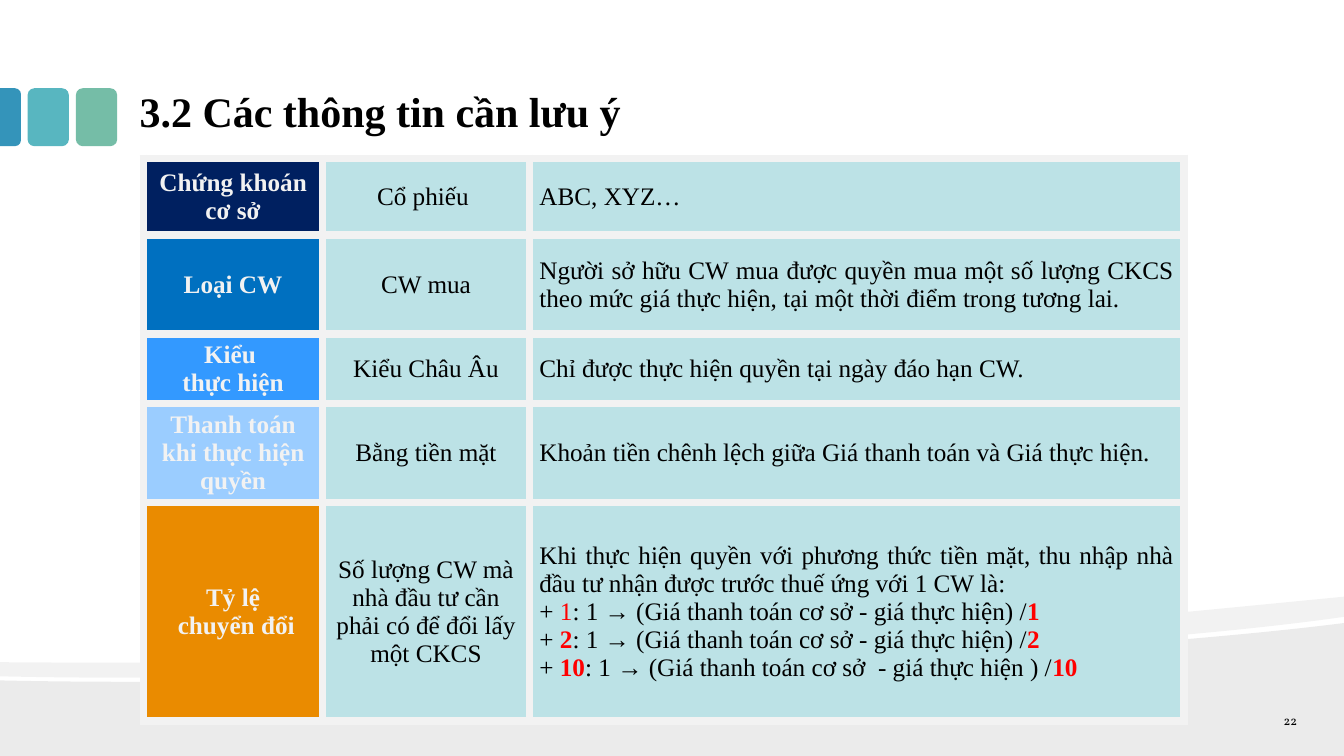
from lxml import etree
from pptx import Presentation
from pptx.dml.color import RGBColor
from pptx.enum.shapes import MSO_SHAPE
from pptx.enum.text import MSO_ANCHOR, PP_ALIGN
from pptx.oxml.ns import qn
from pptx.util import Pt

BLACK = RGBColor(0x00, 0x00, 0x00)
RED = RGBColor(0xFF, 0x00, 0x00)
PALE = RGBColor(0xF2, 0xF2, 0xF2)
CELL = RGBColor(0xBC, 0xE2, 0xE6)
NAVY = RGBColor(0x00, 0x20, 0x60)
BLUE = RGBColor(0x00, 0x70, 0xC0)
AZURE = RGBColor(0x33, 0x99, 0xFF)
SKY = RGBColor(0x9B, 0xCD, 0xFF)
ORANGE = RGBColor(0xEA, 0x8B, 0x00)
GREEN = RGBColor(0x75, 0xBD, 0xA7)
TEAL = RGBColor(0x58, 0xB6, 0xC0)
OCEAN = RGBColor(0x34, 0x94, 0xBA)
SERIF = "Times New Roman"


def add_label(box, text, size, font, bold, align, anchor):
    tf = s.shapes.add_textbox(*map(Pt, box)).text_frame
    tf.word_wrap = True
    tf.vertical_anchor = anchor
    tf.margin_left = tf.margin_right = Pt(9.4)
    tf.margin_top = tf.margin_bottom = Pt(5)
    p = tf.paragraphs[0]
    p.text, p.alignment = text, align
    p.font.name, p.font.size, p.font.bold = font, Pt(size), bold
    p.font.color.rgb = BLACK


prs = Presentation()
prs.slide_width, prs.slide_height = Pt(960), Pt(540)
s = prs.slides.add_slide(prs.slide_layouts[6])

# Waves along the bottom: opacity, points, and where each curve's three points begin
ground = [(960, 445), (960, 540), (0, 540), (0, 486),
          (253.4, 491.8), (750.2, 471.6), (960, 445)]
ribbon = [(960, 426.2), (960, 440.6), (904.3, 448.6), (827.3, 455.8), (740.9, 461.5),
          (502.6, 477.4), (185.8, 487.4), (0, 483.1), (0, 473),
          (469.4, 476.6), (699.1, 451.4), (960, 426.2)]
for opacity, outline, curves in ((8, ground, [4]), (5, ribbon, [2, 5, 9])):
    points = [(Pt(x), Pt(y)) for x, y in outline]
    builder = s.shapes.build_freeform(*points[0])
    builder.add_line_segments(points[1:], close=True)
    wave = builder.convert_to_shape()
    wave.shadow.inherit = False
    wave.fill.solid()
    wave.fill.fore_color.rgb = BLACK
    wave.line.fill.background()
    clr = wave._element.spPr.find(qn("a:solidFill")).find(qn("a:srgbClr"))
    etree.SubElement(clr, qn("a:alpha"), val=str(opacity * 1000))
    # Join the three points of each curve into one Bezier segment
    lines = list(wave._element.iter(qn("a:lnTo")))
    for start in curves:
        bezier = etree.Element(qn("a:cubicBezTo"))
        lines[start - 1].addprevious(bezier)
        for line in lines[start - 1:start + 2]:
            bezier.append(line[0])
            line.getparent().remove(line)

# Tabs beside the title
for kind, box, turn, color in (
        (MSO_SHAPE.ROUNDED_RECTANGLE, (54.2, 63, 29.5, 41.4), 0, GREEN),
        (MSO_SHAPE.ROUNDED_RECTANGLE, (19.7, 63, 29.5, 41.4), 0, TEAL),
        (MSO_SHAPE.ROUND_2_SAME_RECTANGLE, (-13.2, 76.2, 41.4, 15), 90, OCEAN)):
    tab = s.shapes.add_shape(kind, *map(Pt, box))
    tab.rotation = turn
    if turn:
        tab.adjustments[0] = 0.29
    tab.shadow.inherit = False
    tab.fill.solid()
    tab.fill.fore_color.rgb = color
    tab.line.fill.background()

# Title
add_label((90.3, 54, 768, 48), "3.2 Các thông tin cần lưu ý", 30, SERIF, True,
          PP_ALIGN.LEFT, MSO_ANCHOR.BOTTOM)

# Table: row height, heading colour, then the paragraphs of each cell
rows = [
    (54.7, NAVY, ["Chứng khoán cơ sở"], ["Cổ phiếu "], ["ABC, XYZ…"]),
    (70.6, BLUE, ["Loại CW"], ["CW mua"],
     ["Người sở hữu CW mua được quyền mua một số lượng CKCS theo mức giá thực hiện, "
      "tại một thời điểm trong tương lai."]),
    (49.7, AZURE, ["Kiểu ", "thực hiện"], ["Kiểu Châu Âu"],
     ["Chỉ được thực hiện quyền tại ngày đáo hạn CW."]),
    (70.6, SKY, ["Thanh toán khi thực hiện quyền"], ["Bằng tiền mặt"],
     ["Khoản tiền chênh lệch giữa Giá thanh toán và Giá thực hiện. "]),
    (156.2, ORANGE, ["Tỷ lệ", " chuyển đổi"],
     ["Số lượng CW mà nhà đầu tư cần phải có để đổi lấy một CKCS"],
     ["Khi thực hiện quyền với phương thức tiền mặt, thu nhập nhà đầu tư nhận được "
      "trước thuế ứng với 1 CW là:"]),
]
widths = [128, 147.6, 467.7]
table = s.shapes.add_table(len(rows), len(widths), Pt(102.5), Pt(113.3), Pt(sum(widths)),
                           Pt(sum(row[0] for row in rows))).table
table.first_row = table.horz_banding = False
for column, width in zip(table.columns, widths):
    column.width = Pt(width)

for i, (height, heading, *texts) in enumerate(rows):
    table.rows[i].height = Pt(height)
    for j, paragraphs in enumerate(texts):
        cell = table.cell(i, j)
        cell.vertical_anchor = MSO_ANCHOR.MIDDLE
        cell.margin_top = cell.margin_bottom = Pt(1)
        tf = cell.text_frame
        tf.text = "\n".join(paragraphs)
        for p in tf.paragraphs:
            p.alignment = PP_ALIGN.JUSTIFY if j == 2 else PP_ALIGN.CENTER
            p.font.name, p.font.size, p.font.bold = SERIF, Pt(18), j == 0
            p.font.color.rgb = PALE if j == 0 else BLACK
        # Borders go before the fill in the cell properties
        tcPr = cell._tc.get_or_add_tcPr()
        for side in ("a:lnL", "a:lnR", "a:lnT", "a:lnB"):
            ln = etree.SubElement(tcPr, qn(side), w=str(Pt(6)))
            fill = etree.SubElement(ln, qn("a:solidFill"))
            etree.SubElement(fill, qn("a:srgbClr"), val=str(PALE))
        cell.fill.solid()
        cell.fill.fore_color.rgb = heading if j == 0 else CELL
table.cell(0, 2).text_frame.paragraphs[0].alignment = PP_ALIGN.LEFT

# Conversion formulas in the last cell
tf = table.cell(4, 2).text_frame
for ratio, bold, formula in (
        ("1", False, ": 1 → (Giá thanh toán cơ sở - giá thực hiện) /"),
        ("2", True, ": 1 → (Giá thanh toán cơ sở - giá thực hiện) /"),
        ("10", True, ": 1 → (Giá thanh toán cơ sở  - giá thực hiện ) /")):
    p = tf.add_paragraph()
    p.alignment = PP_ALIGN.LEFT
    p.font.name, p.font.size = SERIF, Pt(18)
    for text, color, weight in (("+ ", BLACK, False), (ratio, RED, bold),
                                (formula, BLACK, False), (ratio, RED, True)):
        r = p.add_run()
        r.text = text
        r.font.bold = weight
        r.font.color.rgb = color

# Slide number
add_label((872, 507.6, 64, 14.4), "22", 9, "Vollkorn", False,
          PP_ALIGN.RIGHT, MSO_ANCHOR.MIDDLE)

prs.save("out.pptx")
